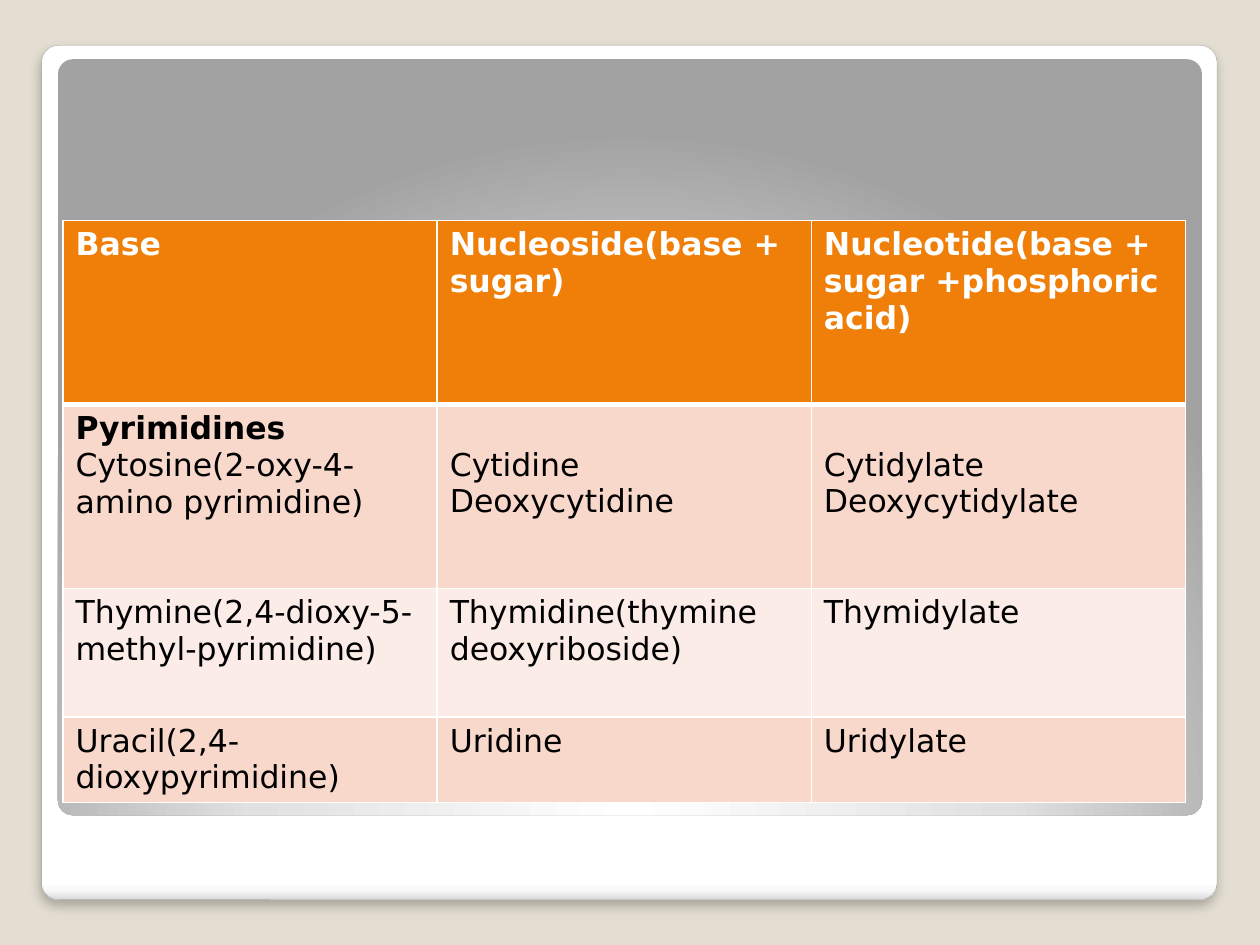
from dataclasses import dataclass
from typing import Any, Optional

from pptx import Presentation
from pptx import oxml as x
from pptx import util as u
from pptx.dml import color
from pptx.enum import shapes
from pptx.oxml import ns

FONT = "DejaVu Sans"
WHITE = color.RGBColor(0xFF, 0xFF, 0xFF)
BLACK = color.RGBColor(0x00, 0x00, 0x00)
BEIGE = color.RGBColor(0xE3, 0xDE, 0xD1)
GREY = color.RGBColor(0xA4, 0xA4, 0xA4)
SOFT_WHITE = color.RGBColor(0xF7, 0xF7, 0xF7)
EDGE_GREY = color.RGBColor(0xDA, 0xDA, 0xDA)
PALE_GREY = color.RGBColor(0xE1, 0xE1, 0xE1)
DARK_GREY = color.RGBColor(0xA2, 0xA2, 0xA2)
ORANGE = color.RGBColor(0xF0, 0x7F, 0x09)
PINK = color.RGBColor(0xF9, 0xD8, 0xCC)
PALE_PINK = color.RGBColor(0xFC, 0xEC, 0xE7)

DOWNWARD = '<a:lin ang="5400000" scaled="0"/>'
FROM_BELOW = ('<a:path path="circle"><a:fillToRect l="50000" t="175000" '
              'r="50000" b="-75000"/></a:path>')
SOFT_SHADOW = ('<a:outerShdw blurRad="76200" dist="50800" dir="5400000" '
               'algn="ctr" rotWithShape="0"><a:srgbClr val="000000">'
               '<a:alpha val="25000"/></a:srgbClr></a:outerShdw>')

LINE_HEIGHT = 0.29
CELL_MARGIN = 0.05
COLUMN_WIDTH = 2.97
THIN, THICK = 1, 3


@dataclass(frozen=True)
class Panel:
    left: float
    top: float
    width: float
    height: float
    stops: tuple[tuple[int, color.RGBColor], ...]
    direction: str
    outline: Optional[color.RGBColor] = None
    shadow: str = ""


@dataclass(frozen=True)
class Row:
    height: float
    fill: color.RGBColor
    cells: tuple[tuple[str, ...], ...]
    ink: color.RGBColor = BLACK
    bold_columns: tuple[int, ...] = ()
    lowered_columns: tuple[int, ...] = ()


PANELS = (
    Panel(0.33, 0.36, 9.33, 6.78,
          ((0, WHITE), (98, WHITE), (99, SOFT_WHITE), (100, EDGE_GREY)),
          DOWNWARD, GREY, SOFT_SHADOW),
    Panel(0.46, 0.47, 9.08, 6,
          ((0, WHITE), (55, PALE_GREY), (100, DARK_GREY)), FROM_BELOW),
)

ROWS = (
    Row(1.46, ORANGE,
        (("Base",), ("Nucleoside(base + sugar)",),
         ("Nucleotide(base + sugar +phosphoric acid)",)),
        ink=WHITE, bold_columns=(0, 1, 2)),
    Row(1.46, PINK,
        (("Pyrimidines", "Cytosine(2-oxy-4-amino pyrimidine)"),
         ("Cytidine", "Deoxycytidine"), ("Cytidylate", "Deoxycytidylate")),
        bold_columns=(0,), lowered_columns=(1, 2)),
    Row(1.02, PALE_PINK,
        (("Thymine(2,4-dioxy-5-methyl-pyrimidine)",),
         ("Thymidine(thymine deoxyriboside)",), ("Thymidylate",))),
    Row(0.59, PINK,
        (("Uracil(2,4-dioxypyrimidine)",), ("Uridine",), ("Uridylate",))),
)


def element(tag: str, attributes: str, content: str) -> Any:
    return x.parse_xml(
        f'<a:{tag} {ns.nsdecls("a")} {attributes}>{content}</a:{tag}>')


def draw_panel(slide: Any, panel: Panel) -> None:
    shape = slide.shapes.add_shape(
        shapes.MSO_SHAPE.ROUNDED_RECTANGLE, u.Inches(panel.left),
        u.Inches(panel.top), u.Inches(panel.width), u.Inches(panel.height))
    shape.adjustments[0] = 0.02
    shape.fill.background()
    properties = shape.element.spPr
    stops = "".join(
        f'<a:gs pos="{position * 1000}"><a:srgbClr val="{shade}"/></a:gs>'
        for position, shade in panel.stops)
    gradient = element("gradFill", 'rotWithShape="1"',
                       f"<a:gsLst>{stops}</a:gsLst>{panel.direction}")
    properties.replace(properties.find(ns.qn("a:noFill")), gradient)
    if panel.outline is None:
        shape.line.fill.background()
    else:
        shape.line.color.rgb = panel.outline
        shape.line.width = u.Pt(0.16)
    shape.shadow.inherit = False
    if panel.shadow:
        effects = properties.find(ns.qn("a:effectLst"))
        properties.replace(effects, element("effectLst", "", panel.shadow))


def set_borders(cell: Any, top: int, bottom: int) -> None:
    properties = cell._tc.get_or_add_tcPr()
    widths = {"lnL": THIN, "lnR": THIN, "lnT": top, "lnB": bottom}
    for tag, width in widths.items():
        properties.append(element(
            tag, f'w="{u.Pt(width)}"',
            f'<a:solidFill><a:srgbClr val="{WHITE}"/></a:solidFill>'))


def fill_cell(cell: Any, row: Row, column: int) -> None:
    cell.fill.solid()
    cell.fill.fore_color.rgb = row.fill
    if column in row.lowered_columns:
        cell.margin_top = u.Inches(CELL_MARGIN + LINE_HEIGHT)
    cell.text_frame.text = "\n".join(row.cells[column])
    for index, paragraph in enumerate(cell.text_frame.paragraphs):
        font = paragraph.runs[0].font
        values = {"name": FONT, "size": u.Pt(18),
                  "bold": index == 0 and column in row.bold_columns}
        for name, value in values.items():
            setattr(font, name, value)
        font.color.rgb = row.ink


def draw_table(slide: Any, rows: tuple[Row, ...]) -> None:
    columns = len(rows[0].cells)
    table = slide.shapes.add_table(
        len(rows), columns, u.Inches(0.5), u.Inches(1.75),
        u.Inches(COLUMN_WIDTH * columns),
        u.Inches(sum(row.height for row in rows))).table
    for table_column in table.columns:
        table_column.width = u.Inches(COLUMN_WIDTH)
    for index, row in enumerate(rows):
        table.rows[index].height = u.Inches(row.height)
        for column in range(columns):
            cell = table.cell(index, column)
            set_borders(cell, THICK if index == 1 else THIN,
                        THICK if index == 0 else THIN)
            fill_cell(cell, row, column)


def main() -> None:
    presentation = Presentation()
    presentation.slide_width = u.Inches(10)
    presentation.slide_height = u.Inches(7.5)
    slide = presentation.slides.add_slide(presentation.slide_layouts[6])
    slide.background.fill.solid()
    slide.background.fill.fore_color.rgb = BEIGE
    for panel in PANELS:
        draw_panel(slide, panel)
    draw_table(slide, ROWS)
    presentation.save("out.pptx")


if __name__ == "__main__":
    main()
